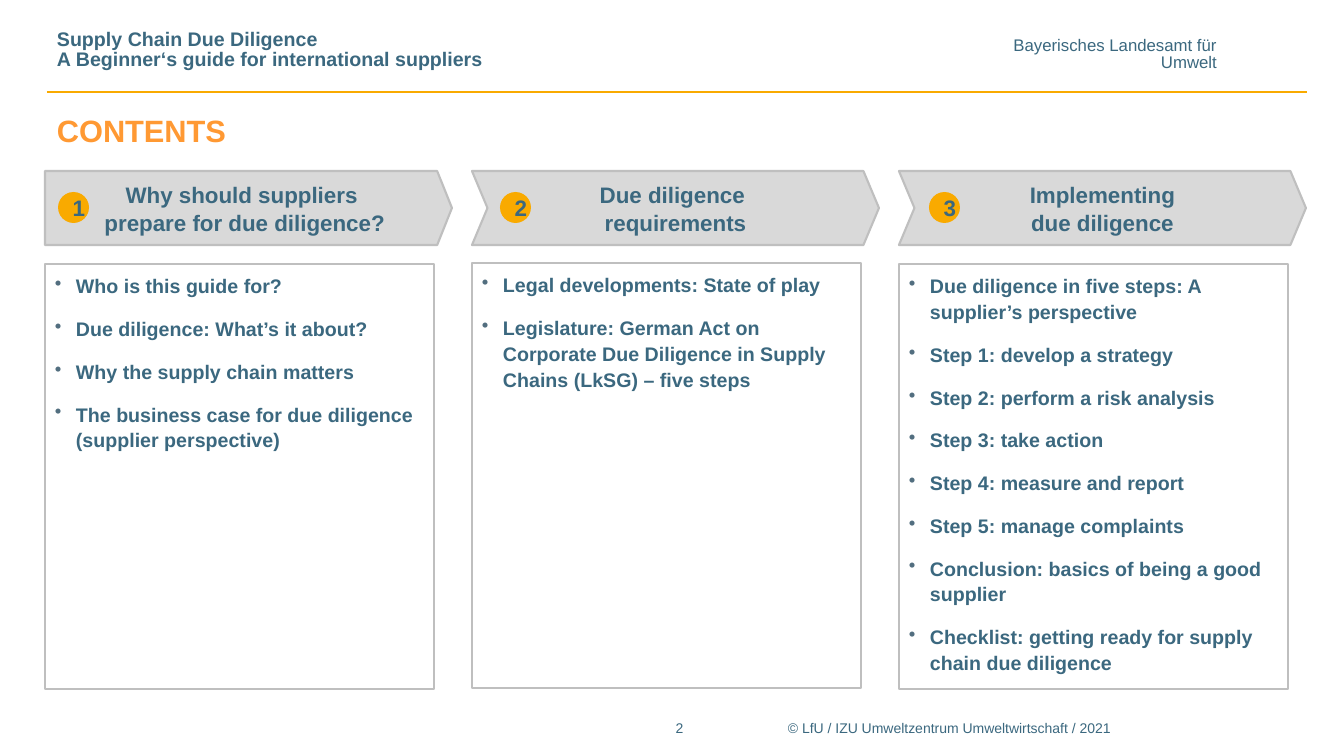
from lxml.etree import SubElement
from pptx import Presentation
from pptx.dml.color import RGBColor
from pptx.enum.shapes import MSO_CONNECTOR, MSO_SHAPE
from pptx.enum.text import MSO_ANCHOR, PP_ALIGN
from pptx.oxml.ns import qn
from pptx.util import Pt

EMU_PER_PX = 914400 / 100.8
COLORS = {
    "text": "3B687F",
    "bullet": "526E7F",
    "title": "FF9933",
    "accent": "F9AA00",
    "arrow": "D9D9D9",
    "border": "BFBFBF",
}
COLUMN_LEFT, COLUMN_STEP = 45, 427
COLUMNS = [
    # arrow shape, point depth, number offset, panel top, heading, items
    (MSO_SHAPE.PENTAGON, 0.2, 13, 264,
     ["Why should suppliers ", "prepare for due diligence?"],
     ["Who is this guide for?",
      "Due diligence: What’s it about?",
      "Why the supply chain matters",
      "The business case for due diligence (supplier perspective)"]),
    (MSO_SHAPE.CHEVRON, 0.21, 28, 263,
     ["Due diligence ", "requirements"],
     ["Legal developments: State of play",
      "Legislature: German Act on Corporate Due Diligence in Supply "
      "Chains (LkSG) – five steps"]),
    (MSO_SHAPE.CHEVRON, 0.21, 30, 264,
     ["Implementing", "due diligence"],
     ["Due diligence in five steps: A supplier’s perspective",
      "Step 1: develop a strategy",
      "Step 2: perform a risk analysis",
      "Step 3: take action",
      "Step 4: measure and report",
      "Step 5: manage complaints",
      "Conclusion: basics of being a good supplier",
      "Checklist: getting ready for supply chain due diligence"]),
]


def px(length):
    return round(length * EMU_PER_PX)


def color(name):
    return RGBColor.from_string(COLORS[name])


def write(shape, lines, size, bold=False, align=PP_ALIGN.LEFT, spacing=1.0,
          anchor=MSO_ANCHOR.TOP, margins=(10, 5), ink="text", bullets=False):
    """Fill a shape with one paragraph per line; margins are (sides, top and bottom)."""
    frame = shape.text_frame
    frame.word_wrap = True
    frame.vertical_anchor = anchor
    frame.margin_left = frame.margin_right = px(margins[0])
    frame.margin_top = frame.margin_bottom = px(margins[1])
    for index, line in enumerate(lines):
        paragraph = frame.add_paragraph() if index else frame.paragraphs[0]
        paragraph.text = line
        paragraph.alignment = align
        paragraph.line_spacing = spacing
        if bullets:
            paragraph.space_after = Pt(3)
            if index:
                paragraph.space_before = Pt(9)
            add_bullet(paragraph)
        font = paragraph.font
        font.name, font.size, font.bold = "Arial", Pt(size), bold
        font.color.rgb = color(ink)


def add_bullet(paragraph):
    properties = paragraph._p.get_or_add_pPr()
    properties.set("marL", str(px(21)))
    properties.set("indent", str(px(-21)))
    bullet_color = SubElement(properties, qn("a:buClr"))
    SubElement(bullet_color, qn("a:srgbClr"), val=COLORS["bullet"])
    SubElement(properties, qn("a:buChar"), char="•")


def add_text(slide, box, lines, size, **style):
    write(slide.shapes.add_textbox(*map(px, box)), lines, size, **style)


def add_figure(slide, kind, box, fill=None, border=None):
    shape = slide.shapes.add_shape(kind, *map(px, box))
    shape.shadow.inherit = False
    if fill:
        shape.fill.solid()
        shape.fill.fore_color.rgb = color(fill)
    else:
        shape.fill.background()
    if border:
        shape.line.color.rgb = color(border)
        shape.line.width = Pt(1.5)
    else:
        shape.line.fill.background()
    return shape


def add_header(slide, left, top, width):
    rule_y = px(top + 68)
    rule = slide.shapes.add_connector(
        MSO_CONNECTOR.STRAIGHT, px(left), rule_y, px(left + width), rule_y)
    rule.line.color.rgb = color("accent")
    rule.line.width = Pt(2)
    SubElement(rule._element.spPr, qn("a:effectLst"))
    add_text(slide, (left + 966, top + 14, 204, 34),
             ["Bayerisches Landesamt für", "Umwelt"], 12,
             align=PP_ALIGN.RIGHT, spacing=0.85, margins=(0, 0))
    add_text(slide, (left, top, 783, 52),
             ["Supply Chain Due Diligence",
              "A Beginner‘s guide for international suppliers"], 14,
             bold=True, spacing=0.85, anchor=MSO_ANCHOR.BOTTOM)
    add_text(slide, (left, top + 79, width, 55), ["CONTENTS"], 22,
             bold=True, anchor=MSO_ANCHOR.MIDDLE, ink="title")


def add_column(slide, left, top, number, column):
    kind, depth, number_offset, panel_top, heading, items = column
    panel = add_figure(slide, MSO_SHAPE.RECTANGLE, (left, panel_top, 389, 425),
                       border="border")
    write(panel, items, 14, bold=True, spacing=1.1, margins=(10, 8), bullets=True)

    arrow = add_figure(slide, kind, (left, top, 407, 74), "arrow", "border")
    arrow.adjustments[0] = depth
    write(arrow, heading, 16, bold=True, align=PP_ALIGN.CENTER, spacing=1.06,
          anchor=MSO_ANCHOR.MIDDLE, margins=(4, 4))

    badge = add_figure(slide, MSO_SHAPE.OVAL,
                       (left + number_offset, top + 21, 31, 31), "accent")
    write(badge, [str(number)], 16, bold=True, align=PP_ALIGN.CENTER,
          anchor=MSO_ANCHOR.MIDDLE)


def add_footer(slide, left, top):
    add_text(slide, (left, top, 71, 31), ["2"], 10, align=PP_ALIGN.CENTER)
    add_text(slide, (left + 134, top, 540, 31),
             ["© LfU / IZU Umweltzentrum Umweltwirtschaft / 2021"], 10)


def main():
    presentation = Presentation()
    presentation.slide_width, presentation.slide_height = px(1344), px(756)
    slide = presentation.slides.add_slide(presentation.slide_layouts[6])
    add_header(slide, 47, 24, 1260)
    for index, column in enumerate(COLUMNS):
        add_column(slide, COLUMN_LEFT + index * COLUMN_STEP, 171, index + 1, column)
    add_footer(slide, 644, 714)
    presentation.save("out.pptx")


if __name__ == "__main__":
    main()
